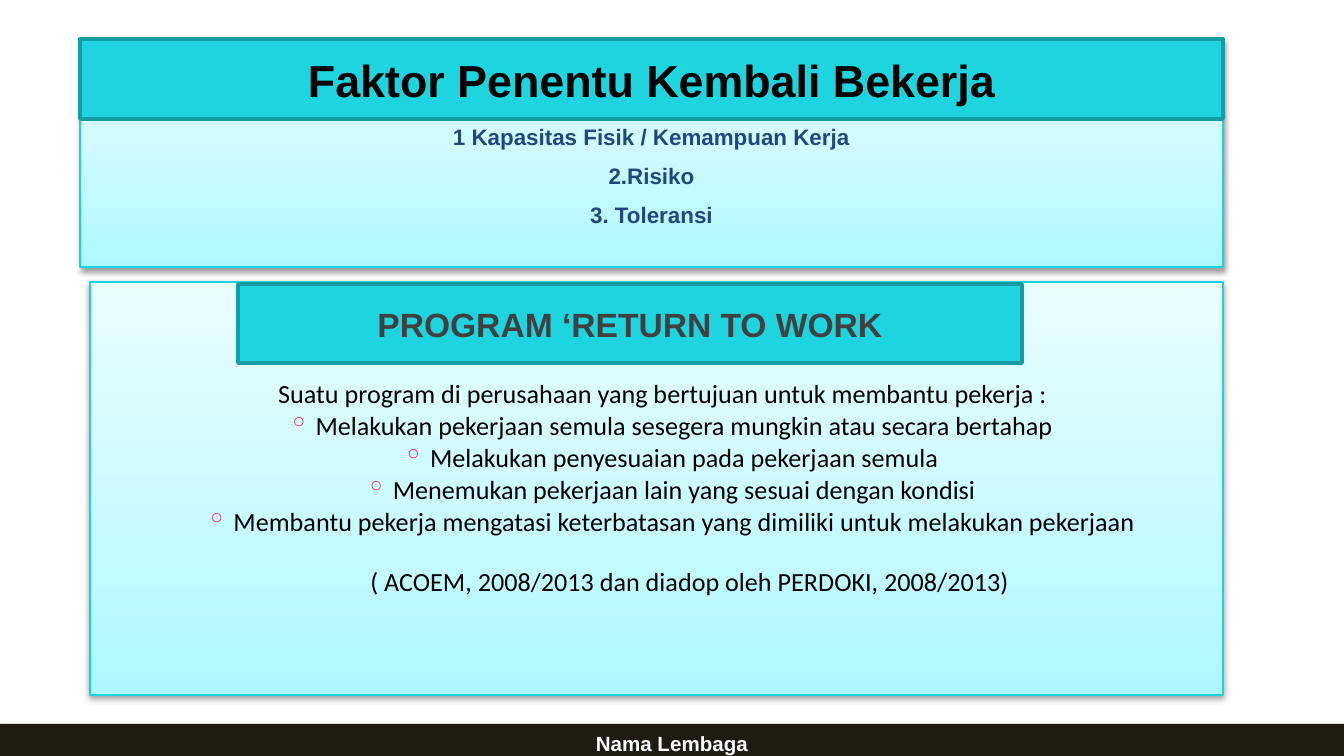
from lxml import etree
from pptx import Presentation
from pptx.dml.color import RGBColor
from pptx.enum.shapes import MSO_SHAPE
from pptx.enum.text import MSO_ANCHOR, PP_ALIGN
from pptx.oxml.ns import qn
from pptx.util import Emu, Pt

RECT = MSO_SHAPE.RECTANGLE
TOP, MIDDLE = MSO_ANCHOR.TOP, MSO_ANCHOR.MIDDLE
CENTER = PP_ALIGN.CENTER
W, H = 1344, 756
SCALE = 9144000 / W

GRADIENT = [(0, "ADF8FF"), (35, "C5FAFF"), (100, "E9FDFF")]
PANEL = dict(fill=GRADIENT, line=("19D4DE", 0.75), shadow=(38, 1.6))
BANNER = dict(fill="1ED4DE", line=("169DA4", 2))
FOOTER = dict(fill="1E1C11", shadow=(35, 1.8))

BODY = dict(name="Calibri", size=14, color="000000", bold=False)
FACTOR = dict(name="Arial", size=12, color="1F497D", bold=True)
TITLE = dict(FACTOR, size=24, color="000000")
SUBTITLE = dict(FACTOR, size=18, color="404040")
FOOTER_TEXT = dict(FACTOR, size=11, color="FFFFFF")

# Paragraph layouts: left margin and first-line indent in px, spacing in pt
PLAIN = dict()
SPACED = dict(before=6.5)
INTRO = dict(margin=13, line=0.9)
BULLET = dict(margin=56, indent=-27, line=0.9, before=2, bullet=("◦", "E62949"))
SOURCE = dict(margin=67, line=0.9, before=17)

PROGRAM = [
    ("Suatu program di perusahaan yang bertujuan untuk membantu pekerja :", INTRO),
    ("Melakukan pekerjaan semula sesegera mungkin atau secara bertahap", BULLET),
    ("Melakukan penyesuaian pada pekerjaan semula", BULLET),
    ("Menemukan pekerjaan lain yang sesuai dengan kondisi", BULLET),
    ("Membantu pekerja mengatasi keterbatasan yang dimiliki untuk melakukan pekerjaan", BULLET),
    ("( ACOEM, 2008/2013 dan diadop oleh PERDOKI, 2008/2013)", SOURCE),
]
FACTORS = [
    ("1 Kapasitas Fisik / Kemampuan Kerja", PLAIN),
    ("2.Risiko", SPACED),
    ("3. Toleransi", SPACED),
]

# Box, box style, paragraphs, font, anchor, top inset
BOXES = [
    ((90, 282, 1133, 413), PANEL, PROGRAM, BODY, MIDDLE, 7),
    ((80, 39, 1143, 228), PANEL, FACTORS, FACTOR, TOP, 84),
    ((80, 39, 1143, 80), BANNER, [("Faktor Penentu Kembali Bekerja", PLAIN)], TITLE, MIDDLE, 7),
    ((238, 284, 784, 79), BANNER, [("PROGRAM ‘RETURN TO WORK", PLAIN)], SUBTITLE, MIDDLE, 7),
    ((0, 724, W, H - 724), FOOTER, [("Nama Lembaga", PLAIN)], FOOTER_TEXT, TOP, 7),
]


def px(n):
    return Emu(round(n * SCALE))


def rgb(value):
    return RGBColor.from_string(value)


def add_xml(parent, tag, **attrs):
    return etree.SubElement(parent, qn(tag), {k: str(v) for k, v in attrs.items()})


def set_gradient(s, stops):
    """Fill upwards, with the first stop at the bottom edge."""
    s.fill.gradient()
    grad = s._element.spPr.find(qn("a:gradFill"))
    for child in list(grad):
        grad.remove(child)
    gs_list = add_xml(grad, "a:gsLst")
    for pos, color in stops:
        gs = add_xml(gs_list, "a:gs", pos=pos * 1000)
        add_xml(gs, "a:srgbClr", val=color)
    add_xml(grad, "a:lin", ang=270 * 60000, scaled=0)


def set_shadow(s, alpha, dist):
    effects = s._element.spPr.find(qn("a:effectLst"))
    shadow = add_xml(effects, "a:outerShdw", blurRad=Pt(3.1), dist=Pt(dist),
                     dir=90 * 60000, rotWithShape=0)
    color = add_xml(shadow, "a:srgbClr", val="000000")
    add_xml(color, "a:alpha", val=alpha * 1000)


def add_box(slide, box, fill, line=None, shadow=None):
    s = slide.shapes.add_shape(RECT, *map(px, box))
    s.shadow.inherit = False
    if isinstance(fill, str):
        s.fill.solid()
        s.fill.fore_color.rgb = rgb(fill)
    else:
        set_gradient(s, fill)
    if line:
        s.line.color.rgb = rgb(line[0])
        s.line.width = Pt(line[1])
    else:
        s.line.fill.background()
    if shadow:
        set_shadow(s, *shadow)
    return s


def format_paragraph(p, margin=0, indent=0, line=1.0, before=0, bullet=None):
    pPr = p._p.get_or_add_pPr()
    pPr.set("marL", str(px(margin)))
    pPr.set("indent", str(px(indent)))
    if bullet:
        char, color = bullet
        add_xml(add_xml(pPr, "a:buClr"), "a:srgbClr", val=color)
        add_xml(pPr, "a:buChar", char=char)
    p.alignment = CENTER
    p.line_spacing = line
    p.space_before = Pt(before)


def write(s, paragraphs, font, anchor, inset):
    tf = s.text_frame
    tf.word_wrap = True
    tf.vertical_anchor = anchor
    tf.margin_top = px(inset)
    for i, (text, layout) in enumerate(paragraphs):
        p = tf.add_paragraph() if i else tf.paragraphs[0]
        format_paragraph(p, **layout)
        r = p.add_run()
        r.text = text
        values = dict(name=font["name"], size=Pt(font["size"]), bold=font["bold"])
        for key, value in values.items():
            setattr(r.font, key, value)
        r.font.color.rgb = rgb(font["color"])


def main():
    prs = Presentation()
    prs.slide_width, prs.slide_height = px(W), px(H)
    slide = prs.slides.add_slide(prs.slide_layouts[6])
    for box, style, paragraphs, font, anchor, inset in BOXES:
        write(add_box(slide, box, **style), paragraphs, font, anchor, inset)
    prs.save("out.pptx")


if __name__ == "__main__":
    main()
